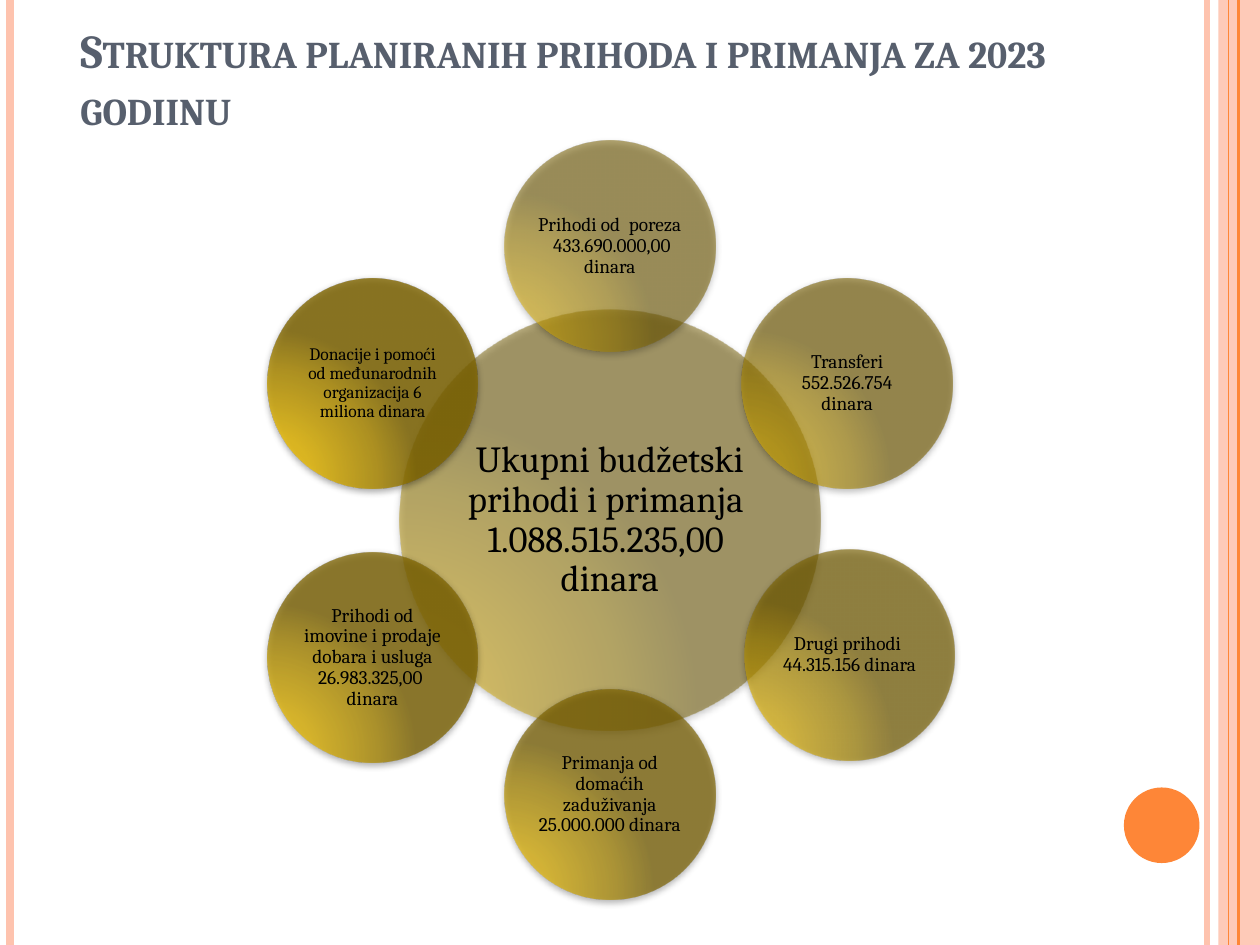
import math

from lxml import etree
from pptx import Presentation
from pptx.dml.color import RGBColor
from pptx.enum.shapes import MSO_CONNECTOR, MSO_SHAPE
from pptx.enum.text import MSO_ANCHOR, PP_ALIGN
from pptx.oxml import parse_xml
from pptx.oxml.ns import nsdecls, qn
from pptx.util import Inches, Pt

OVAL, BAR, STRAIGHT = MSO_SHAPE.OVAL, MSO_SHAPE.RECTANGLE, MSO_CONNECTOR.STRAIGHT
MIDDLE, BOTTOM = MSO_ANCHOR.MIDDLE, MSO_ANCHOR.BOTTOM
CENTER, LEFT = PP_ALIGN.CENTER, PP_ALIGN.LEFT

THEME = {
    "font": "Cambria", "title": "575F6D", "text": "000000",
    "orange": "FE8637", "peach": "FEC3AE",
    "title_size": 27, "hub_size": 21, "petal_size": 11, "small_size": 10,
    # Gradient stops: position in percent, colour at the first and last circle
    "gold": [(0, "D7AC00", "EEBF00"), (30, "D0A600", "E6B800"),
             (75, "9C7D00", "AD8A00"), (100, "735C00", "806600")],
}

deck = Presentation()
deck.slide_width, deck.slide_height = Inches(10), Inches(7.5)
page = deck.slides.add_slide(deck.slide_layouts[6])

# Square grid: 100 columns by 75 rows
COLUMNS, ROWS = 100, 75
CELL = deck.slide_width / COLUMNS


def add_text(place, words, size, color, align, anchor, inset=None):
    box = page.shapes.add_textbox(*[round(n * CELL) for n in place])
    frame = box.text_frame
    frame.word_wrap = True
    frame.vertical_anchor = anchor
    if inset is not None:
        frame.margin_left = frame.margin_right = round(inset * CELL)
        frame.margin_top = frame.margin_bottom = round(inset * CELL)
    frame.text = words
    para = frame.paragraphs[0]
    para.alignment = align
    span = para.runs[0]
    span.font.name, span.font.size = THEME["font"], Pt(size)
    span.font.color.rgb = RGBColor.from_string(color)
    return para, span


def add_plain(kind, place, color):
    shape = page.shapes.add_shape(kind, *[round(n * CELL) for n in place])
    shape.shadow.inherit = False
    shape.fill.solid()
    shape.fill.fore_color.rgb = RGBColor.from_string(color)
    shape.line.fill.background()
    return shape


# Page frame: vertical rules, right band and page-number disc
band = add_plain(BAR, (96.7, 0, 3.3, ROWS), THEME["peach"])
band_color = band.fill._xPr.find(qn("a:solidFill"))[0]
etree.SubElement(band_color, qn("a:alpha"), val="87000")
for column, color, weight in [(95.8, "peach", 3), (0.8, "peach", 4.5),
                              (98.3, "orange", 1.5), (97.5, "orange", 0.75)]:
    x = round(column * CELL)
    rule = page.shapes.add_connector(STRAIGHT, x, 0, x, deck.slide_height)
    rule.line.color.rgb = RGBColor.from_string(THEME[color])
    rule.line.width = Pt(weight)
    etree.SubElement(rule._element.spPr, qn("a:effectLst"))
add_plain(OVAL, (89.2, 62.5, 6, 6), THEME["orange"])

# Title
para, span = add_text((5.4, 2.7, 90, 8.5),
                      "Struktura planiranih prihoda i primanja za 2023 godiinu",
                      THEME["title_size"], THEME["title"], LEFT, BOTTOM)
span.font.bold = True
span._r.get_or_add_rPr().set("cap", "small")

# Radial diagram: the total in the hub, its parts clockwise from the top
HUB_X, HUB_Y, HUB_SIZE = 48.4, 41.3, 33.4
PETAL_SIZE, RING = HUB_SIZE / 2, 21.75
hub_words = "Ukupni budžetski prihodi i primanja  1.088.515.235,00  dinara"
petals = [
    "Prihodi od  poreza  433.690.000,00 dinara",
    "Transferi 552.526.754 dinara",
    "Drugi prihodi  44.315.156 dinara",
    "Primanja od domaćih zaduživanja 25.000.000 dinara",
    "Prihodi od imovine i prodaje dobara i usluga 26.983.325,00  dinara",
    "Donacije i pomoći od međunarodnih organizacija 6 miliona dinara",
]
circles = [(hub_words, HUB_X, HUB_Y, HUB_SIZE, THEME["hub_size"], 0.3)]
for index, words in enumerate(petals):
    angle = math.tau * index / len(petals)
    nudge = 0.2 if index == 2 else 0
    is_last = index == len(petals) - 1
    circles.append((words,
                    HUB_X + RING * math.sin(angle) + nudge,
                    HUB_Y - RING * math.cos(angle) - nudge,
                    PETAL_SIZE,
                    THEME["small_size"] if is_last else THEME["petal_size"],
                    0.1 if is_last else 0.2))

for index, (words, x, y, size, points, inset) in enumerate(circles):
    # Each circle is a little brighter and more opaque than the one before
    share = index / (len(circles) - 1)
    alpha = 50000 + 5000 * index
    stops = ""
    for position, first, last in THEME["gold"]:
        pairs = zip(RGBColor.from_string(first), RGBColor.from_string(last))
        color = RGBColor(*[round(a + (b - a) * share) for a, b in pairs])
        stops += (f'<a:gs pos="{position * 1000}"><a:srgbClr val="{color}">'
                  f'<a:alpha val="{alpha}"/></a:srgbClr></a:gs>')
    circle = add_plain(OVAL, (x - size / 2, y - size / 2, size, size), THEME["orange"])
    props = circle._element.spPr
    props.replace(props.find(qn("a:solidFill")), parse_xml(
        f'<a:gradFill {nsdecls("a")} rotWithShape="1"><a:gsLst>{stops}</a:gsLst>'
        '<a:path path="circle"><a:fillToRect l="5000" t="100000" r="120000" b="10000"/>'
        '</a:path></a:gradFill>'))
    props.replace(props.find(qn("a:effectLst")), parse_xml(
        f'<a:effectLst {nsdecls("a")}><a:outerShdw blurRad="{Pt(4)}" dist="{Pt(1.6)}" '
        'dir="5400000" rotWithShape="0"><a:srgbClr val="000000"><a:alpha val="42000"/>'
        '</a:srgbClr></a:outerShdw></a:effectLst>'))

    # The label fills the square inscribed in the circle
    side = size / math.sqrt(2)
    para, span = add_text((x - side / 2, y - side / 2, side, side), words, points,
                          THEME["text"], CENTER, MIDDLE, inset)
    para.line_spacing = 0.9

deck.save("out.pptx")
